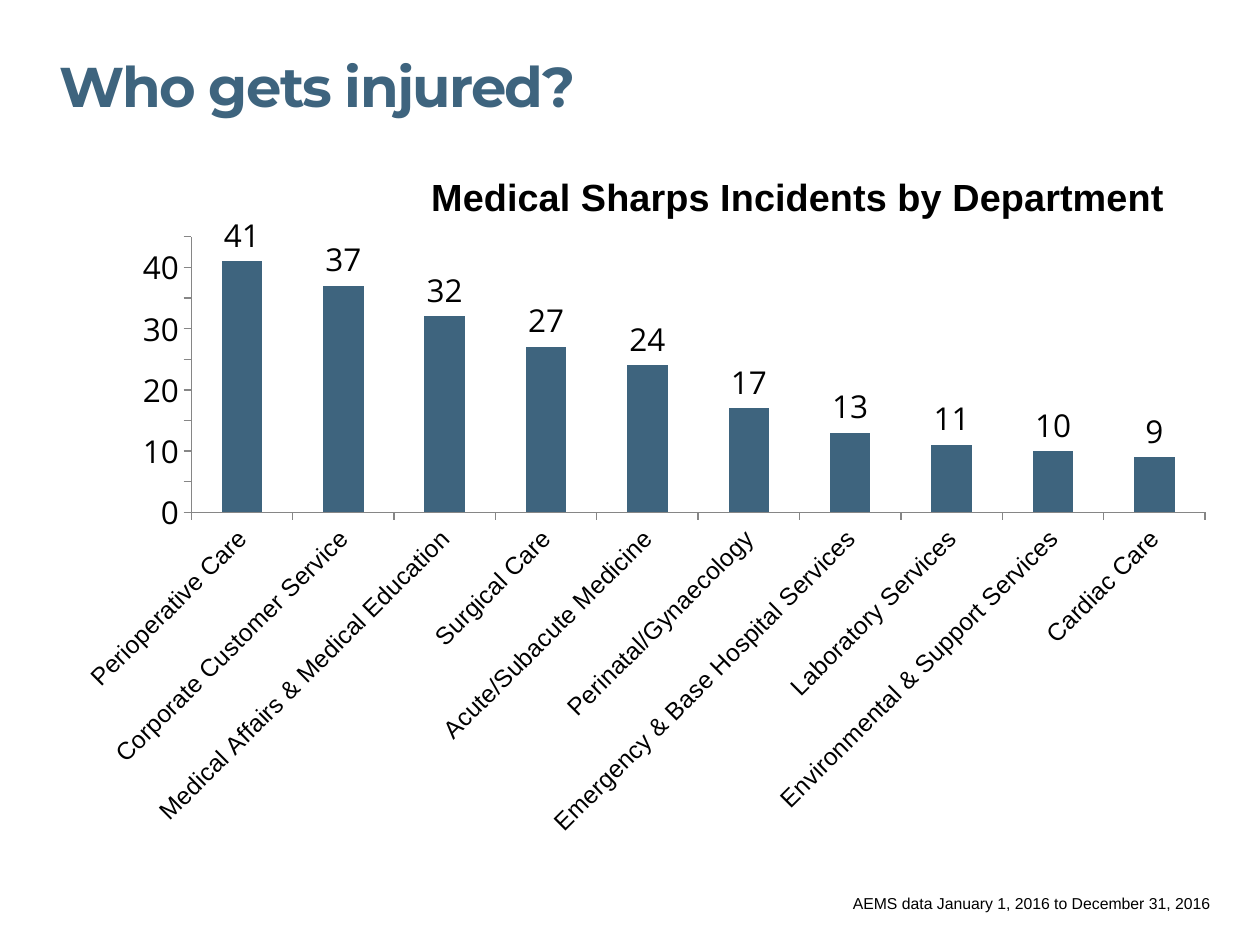
from dataclasses import dataclass

from lxml import etree
from pptx import Presentation
from pptx import util as u
from pptx.chart.data import CategoryChartData
from pptx.dml.color import RGBColor
from pptx.enum import chart as ch
from pptx.enum import text as tx
from pptx.oxml import parse_xml
from pptx.oxml.ns import nsdecls, qn

WIDE, HIGH = 10, 7.5
HUES = {"steel": "3E647E", "black": "000000", "axis": "868686"}
STAFF = {
    "Perioperative Care": 41,
    "Corporate Customer Service": 37,
    "Medical Affairs & Medical Education": 32,
    "Surgical Care": 27,
    "Acute/Subacute Medicine": 24,
    "Perinatal/Gynaecology": 17,
    "Emergency & Base Hospital Services": 13,
    "Laboratory Services": 11,
    "Environmental & Support Services": 10,
    "Cardiac Care": 9,
}


@dataclass
class Area:
    left: float
    top: float
    width: float
    height: float

    def box(self) -> list:
        return [u.Inches(n) for n in (self.left, self.top, self.width, self.height)]


@dataclass
class Label:
    words: str
    area: Area
    face: str
    size: float
    hue: str
    bold: bool = False
    pad: float = 0
    lead: float = 1
    track: int = 0
    wrap: bool = True


LABELS = [
    Label("AEMS data January 1, 2016 to December 31, 2016",
          Area(6.67, 7.04, 3.08, 0.25), "Arial", 9, "black", pad=0.1, wrap=False),
    Label("Who gets injured?", Area(0.47, 0.49, 8.5, 0.48), "Montserrat", 32,
          "steel", bold=True, lead=0.85, track=-100),
]


def color(hue: str) -> RGBColor:
    return RGBColor.from_string(HUES[hue])


def style(font, face: str, size: float, hue: str, bold: bool = False) -> None:
    font.name, font.size, font.bold = face, u.Pt(size), bold
    font.color.rgb = color(hue)


def write(slide, label: Label) -> None:
    frame = slide.shapes.add_textbox(*label.area.box()).text_frame
    frame.word_wrap = label.wrap
    frame.margin_left = frame.margin_right = u.Inches(label.pad)
    frame.margin_top = frame.margin_bottom = u.Inches(label.pad / 2)
    frame.vertical_anchor = tx.MSO_ANCHOR.TOP
    para = frame.paragraphs[0]
    para.line_spacing = label.lead
    run = para.add_run()
    run.text = label.words
    style(run.font, label.face, label.size, label.hue, label.bold)
    if label.track:
        run.font._element.set("spc", str(label.track))


def layout(place: dict, inner: bool = False) -> etree._Element:
    target = '<c:layoutTarget val="inner"/>' if inner else ""
    modes = "".join(f'<c:{key}Mode val="edge"/>' for key in "xy")
    sizes = "".join(f'<c:{key} val="{val}"/>' for key, val in place.items())
    return parse_xml(f'<c:layout {nsdecls("c")}><c:manualLayout>{target}{modes}'
                     f'{sizes}</c:manualLayout></c:layout>')


def place(node, spot) -> None:
    for old in node.findall(qn("c:layout")):
        node.remove(old)
    text = node.find(qn("c:tx"))
    node.insert(0 if text is None else 1, spot)


def edge(axis) -> None:
    axis.has_major_gridlines = False
    axis.major_tick_mark = ch.XL_TICK_MARK.OUTSIDE
    axis.minor_tick_mark = ch.XL_TICK_MARK.NONE
    axis.format.line.color.rgb = color("axis")
    axis.format.line.width = u.Pt(0.75)


def plot(slide, area: Area) -> None:
    data = CategoryChartData()
    data.categories = list(STAFF)
    data.add_series("Series 1", list(STAFF.values()))
    chart = slide.shapes.add_chart(
        ch.XL_CHART_TYPE.COLUMN_CLUSTERED, *area.box(), data).chart
    style(chart.font, "Open Sans", 18, "black")
    chart.has_legend = False

    chart.has_title = True
    run = chart.chart_title.text_frame.paragraphs[0].add_run()
    run.text = "Medical Sharps Incidents by Department"
    style(run.font, "Arial", 21.6, "black", True)
    chart.chart_title.include_in_layout = False
    place(chart.chart_title._element, layout({"x": 0.31, "y": 0.03}))
    place(chart._chartSpace.chart.plotArea,
          layout({"x": 0.11, "y": 0.13, "w": 0.87, "h": 0.39}, True))

    cats, vals = chart.category_axis, chart.value_axis
    edge(cats)
    edge(vals)
    style(cats.tick_labels.font, "Arial", 14, "black")
    cats._element.find(qn("c:txPr")).find(qn("a:bodyPr")).set("rot", "-2700000")
    vals.minimum_scale, vals.maximum_scale, vals.major_unit = 0, 45, 5

    bars = chart.plots[0]
    bars.gap_width = 150
    bars.vary_by_categories = False
    fill = bars.series[0].format.fill
    fill.solid()
    fill.fore_color.rgb = color("steel")
    bars.has_data_labels = True
    marks = bars.data_labels
    marks.show_value = True
    marks.position = ch.XL_LABEL_POSITION.OUTSIDE_END
    style(marks.font, "Open Sans", 18, "black")


def main() -> None:
    deck = Presentation()
    deck.slide_width, deck.slide_height = u.Inches(WIDE), u.Inches(HIGH)
    slide = deck.slides.add_slide(deck.slide_layouts[6])
    plot(slide, Area(0.5, 1.15, 9.25, 5.61))
    for label in LABELS:
        write(slide, label)
    deck.save("out.pptx")


if __name__ == "__main__":
    main()
